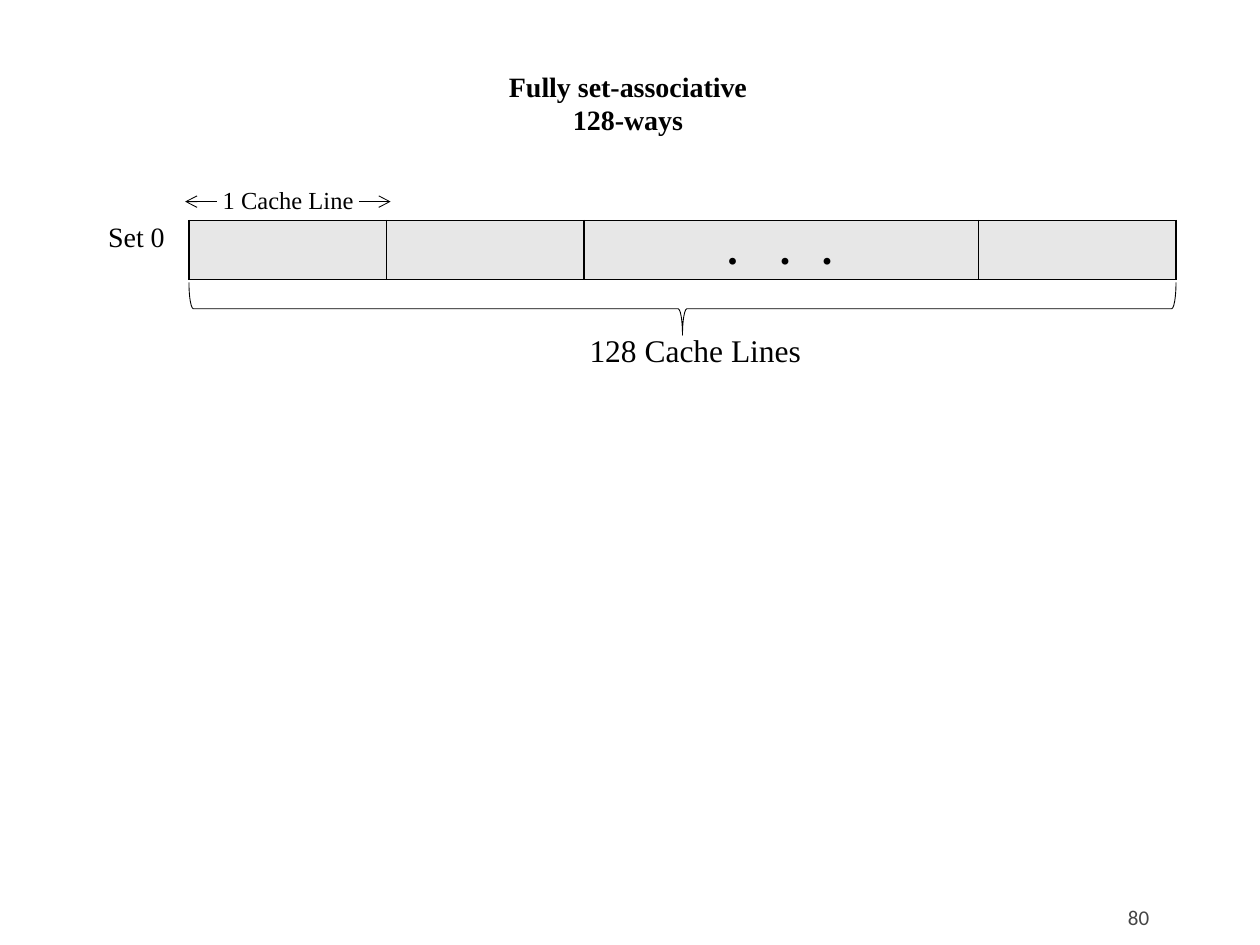
from lxml import etree
from pptx import Presentation
from pptx.dml.color import RGBColor
from pptx.enum import shapes, text
from pptx.oxml import ns
from pptx.util import Pt

# Content
SERIF = "Times New Roman"
BLACK, GREY, DARK = "000000", "E7E7E7", "454545"
TITLE = ["Fully set-associative", "128-ways"]
LABELS = [  # wording, size, (left, top, width, height)
    ("1 Cache Line", 14, (120.2, 102.2, 90, 24.5)),
    ("Set 0", 16, (54.7, 121.7, 47.5, 26.6)),
    ("128 Cache Lines", 18, (329.8, 185.8, 136.8, 28.8)),
]
PAGE_NUMBER = "80"
DOT_STOPS = (82, 112, 136)  # distances from the left of the wide cell
CELL_UNITS = (1, 1, 2, 1)

# Geometry
UNIT = 112.8
ROW_LEFT, ROW_TOP, ROW_HEIGHT = 108, 126, 30
ROW_WIDTH = UNIT * sum(CELL_UNITS)
BRACE_TOP, BRACE_DEPTH = 161.3, 30.2
ARROW_Y, ARROW_LENGTH = 115.2, 18
ARROWS = [(105.8, "headEnd"), (205.2, "tailEnd")]


def color(value):
    return RGBColor.from_string(value)


def add_element(parent, tag, **attributes):
    return etree.SubElement(parent, ns.qn(tag), **attributes)


def add_run(paragraph, wording, size, font=SERIF, fill=BLACK, bold=False):
    run = paragraph.add_run()
    run.text = wording
    run.font.size, run.font.name, run.font.bold = Pt(size), font, bold
    run.font.color.rgb = color(fill)


def add_text(slide, wording, size, box, **style):
    shape = slide.shapes.add_textbox(*map(Pt, box))
    shape.text_frame.word_wrap = False
    add_run(shape.text_frame.paragraphs[0], wording, size, **style)
    return shape.text_frame


def style_line(shape):
    shape.line.color.rgb = color(BLACK)
    shape.line.width = Pt(0.5)


def style_cell(cell):
    properties = cell._tc.get_or_add_tcPr()
    for side in ("a:lnL", "a:lnR", "a:lnT", "a:lnB"):
        border = add_element(properties, side, w=str(Pt(1)))
        add_element(add_element(border, "a:solidFill"), "a:srgbClr", val=BLACK)
    cell.fill.solid()
    cell.fill.fore_color.rgb = color(GREY)


presentation = Presentation()
presentation.slide_width, presentation.slide_height = Pt(720), Pt(540)
slide = presentation.slides.add_slide(presentation.slide_layouts[5])

# Title
title = slide.shapes.title
title.left, title.top, title.width, title.height = map(Pt, (282.2, 36, 153.4, 46))
frame = title.text_frame
frame.word_wrap = False
frame.auto_size = text.MSO_AUTO_SIZE.NONE
frame.vertical_anchor = text.MSO_ANCHOR.TOP
for index, wording in enumerate(TITLE):
    paragraph = frame.add_paragraph() if index else frame.paragraphs[0]
    paragraph.alignment = text.PP_ALIGN.CENTER
    paragraph.space_before = Pt(0)
    add_run(paragraph, wording, 16, bold=True)

# Row of cache lines
table = slide.shapes.add_table(
    1, len(CELL_UNITS), Pt(ROW_LEFT), Pt(ROW_TOP), Pt(ROW_WIDTH), Pt(ROW_HEIGHT)
).table
table.first_row = table.horz_banding = False
for index, units in enumerate(CELL_UNITS):
    table.columns[index].width = Pt(UNIT * units)
    style_cell(table.cell(0, index))

# Dots in the wide cell
wide_cell = table.cell(0, CELL_UNITS.index(2))
wide_cell.margin_left = 0
wide_cell.vertical_anchor = text.MSO_ANCHOR.MIDDLE
paragraph = wide_cell.text_frame.paragraphs[0]
tabs = add_element(paragraph._p.get_or_add_pPr(), "a:tabLst")
for stop in DOT_STOPS:
    add_element(tabs, "a:tab", pos=str(Pt(stop)), algn="l")
add_run(paragraph, "\t." * len(DOT_STOPS), 24, bold=True)

# Arrows beside the cache line label
for left, end in ARROWS:
    arrow = slide.shapes.add_connector(
        shapes.MSO_CONNECTOR.STRAIGHT,
        Pt(left), Pt(ARROW_Y), Pt(left + ARROW_LENGTH), Pt(ARROW_Y))
    style_line(arrow)
    add_element(arrow.line._get_or_add_ln(), f"a:{end}", type="arrow")
    add_element(arrow._element.spPr, "a:effectLst")

# Brace under the row, turned about its centre
center_x, center_y = ROW_LEFT + ROW_WIDTH / 2, BRACE_TOP + BRACE_DEPTH / 2
brace = slide.shapes.add_shape(
    shapes.MSO_SHAPE.LEFT_BRACE,
    Pt(center_x - BRACE_DEPTH / 2), Pt(center_y - ROW_WIDTH / 2),
    Pt(BRACE_DEPTH), Pt(ROW_WIDTH))
brace.rotation = 270
brace.shadow.inherit = False
brace.fill.background()
style_line(brace)

# Labels and page number
for wording, size, box in LABELS:
    add_text(slide, wording, size, box)
frame = add_text(slide, PAGE_NUMBER, 12, (606.2, 509.8, 57.6, 21.6),
                 font="Calibri", fill=DARK)
frame.word_wrap = True
frame.margin_bottom = 0
frame.vertical_anchor = text.MSO_ANCHOR.BOTTOM
frame.paragraphs[0].alignment = text.PP_ALIGN.RIGHT

presentation.save("out.pptx")
